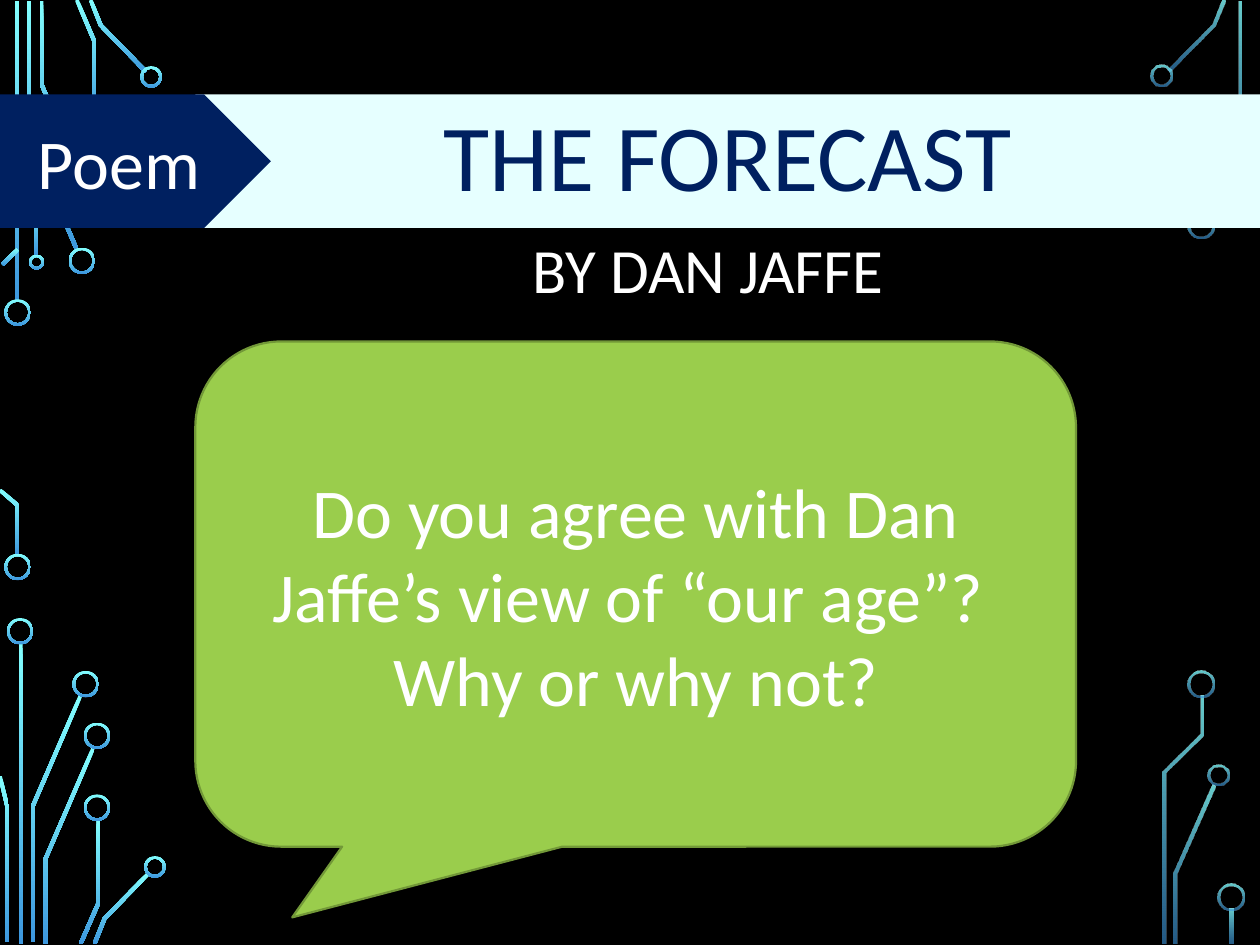
import math

from lxml import etree
from pptx import Presentation
from pptx.dml.color import RGBColor
from pptx.enum import shapes as kinds, text as txt
from pptx.oxml.ns import qn
from pptx.util import Inches, Pt

COLORS = {"black": "000000", "white": "FFFFFF", "navy": "002060", "ice": "E6FFFF",
          "green": "9ACD4C", "dark green": "729838", "cyan": "82FFFF", "blue": "3D97DE"}
FONT = "Calibri"
TRACE_WIDTH = 0.03
RING_WIDTH = 0.02

BYLINE = "BY DAN JAFFE"
POEM_TITLE = "THE FORECAST"
TAG = "Poem"
QUESTION = "Do you agree with Dan Jaffe’s view of “our age”?  Why or why not?"

# Traces are centre lines, bars are (left, top, height), rings are (centre x, centre y, diameter).
CIRCUITS = [
    {"opacity": None,
     "bars": [(0.12, 0.01, 2.39), (0.15, 5.1, 2.39)],
     "traces": [
         [(0.23, 0.01), (0.23, 1.09), (0.61, 1.98)],
         [(0.33, 0.01), (0.33, 0.67), (0.71, 1.56)],
         [(0.61, 0), (0.75, 0.33), (0.75, 1)],
         [(0.72, 0), (0.8, 0.2), (1.16, 0.57)],
         [(0.02, 2.1), (0.14, 1.98)],
         [(0, 3.89), (0.14, 4.01), (0.14, 4.41)],
         [(0.15, 1.52), (0.29, 1.66), (0.29, 2.03)],
         [(0.26, 7.48), (0.26, 6.4), (0.64, 5.52)],
         [(0, 6.16), (0.06, 6.41), (0.06, 7.48)],
         [(0.36, 7.49), (0.36, 6.82), (0.74, 5.94)],
         [(0.64, 7.49), (0.78, 7.17), (0.78, 6.5)],
         [(0.75, 7.49), (0.83, 7.29), (1.18, 6.93)]],
     "rings": [(0.14, 2.48, 0.21), (0.14, 4.5, 0.21), (0.65, 2.07, 0.21),
               (0.75, 1.66, 0.21), (0.75, 1.09, 0.21), (1.2, 0.61, 0.17),
               (0.29, 2.08, 0.12), (0.16, 5.01, 0.21), (0.68, 5.43, 0.21),
               (0.77, 5.84, 0.21), (0.77, 6.41, 0.21), (1.23, 6.88, 0.17)]},
    {"opacity": (80, 60),
     "bars": [(9.76, 7.21, 0.28)],
     "traces": [
         [(9.28, 0.56), (9.63, 0.2), (9.71, 0)],
         [(9.33, 7.49), (9.33, 6.93), (9.63, 6.23)],
         [(9.53, 1.69), (9.53, 1.38), (9.84, 1.07), (9.84, 0.01)],
         [(9.24, 7.49), (9.24, 6.13), (9.54, 5.83), (9.54, 5.52)]],
     "rings": [(9.22, 0.6, 0.17), (9.53, 1.79, 0.21), (9.67, 6.15, 0.17),
               (9.53, 5.43, 0.21), (9.77, 7.12, 0.21)]},
]


def color(name):
    return RGBColor.from_string(COLORS[name])


def glow(shape, opacity):
    """Fill with the cyan-to-blue gradient, running downwards."""
    shape.shadow.inherit = False
    shape.line.fill.background()
    shape.fill.gradient()
    shape.fill.gradient_angle = 270
    for i, (stop, name) in enumerate(zip(shape.fill.gradient_stops, ("cyan", "blue"))):
        stop.color.rgb = color(name)
        stop.position = i
    if opacity:
        for value, rgb in zip(opacity, shape._element.spPr.iter(qn("a:srgbClr"))):
            etree.SubElement(rgb, qn("a:alpha")).set("val", str(value * 1000))


def trace_outline(points):
    """Return the closed outline of a centre line with mitred corners."""
    normals = []
    for (x1, y1), (x2, y2) in zip(points, points[1:]):
        length = math.hypot(x2 - x1, y2 - y1)
        normals.append(((y1 - y2) / length, (x2 - x1) / length))
    one_side, other_side = [], []
    joints = zip(points, normals[:1] + normals, normals + normals[-1:])
    for (x, y), (ax, ay), (bx, by) in joints:
        reach = TRACE_WIDTH / 2 / (1 + ax * bx + ay * by)
        dx, dy = (ax + bx) * reach, (ay + by) * reach
        one_side.append((Inches(x + dx), Inches(y + dy)))
        other_side.append((Inches(x - dx), Inches(y - dy)))
    return one_side + other_side[::-1]


def draw_circuit(slide, circuit):
    group = slide.shapes.add_group_shape().shapes
    parts = []
    for left, top, height in circuit["bars"]:
        parts.append(group.add_shape(kinds.MSO_SHAPE.RECTANGLE, Inches(left), Inches(top),
                                     Inches(TRACE_WIDTH), Inches(height)))
    for points in circuit["traces"]:
        outline = trace_outline(points)
        builder = group.build_freeform(*outline[0])
        builder.add_line_segments(outline[1:], close=True)
        parts.append(builder.convert_to_shape())
    for x, y, size in circuit["rings"]:
        ring = group.add_shape(kinds.MSO_SHAPE.DONUT, Inches(x - size / 2),
                               Inches(y - size / 2), Inches(size), Inches(size))
        ring.adjustments[0] = RING_WIDTH / size
        parts.append(ring)
    for part in parts:
        glow(part, circuit["opacity"])


def write(shape, words, size, ink, align=txt.PP_ALIGN.CENTER, spacing=1.0):
    frame = shape.text_frame
    frame.text = words
    frame.word_wrap = True
    frame.auto_size = txt.MSO_AUTO_SIZE.NONE
    frame.vertical_anchor = txt.MSO_ANCHOR.MIDDLE
    paragraph = frame.paragraphs[0]
    paragraph.alignment = align
    paragraph.line_spacing = spacing
    font = paragraph.runs[0].font
    font.name, font.size, font.color.rgb = FONT, Pt(size), color(ink)


def add_panel(slide, kind, box, fill):
    panel = slide.shapes.add_shape(kind, *map(Inches, box))
    panel.shadow.inherit = False
    panel.fill.solid()
    panel.fill.fore_color.rgb = color(fill)
    panel.line.fill.background()
    return panel


def main():
    deck = Presentation()
    deck.slide_width, deck.slide_height = Inches(10), Inches(7.5)
    slide = deck.slides.add_slide(deck.slide_layouts[5])
    slide.background.fill.solid()
    slide.background.fill.fore_color.rgb = color("black")

    for circuit in CIRCUITS:
        draw_circuit(slide, circuit)

    byline = slide.shapes.title
    byline.left, byline.top, byline.width, byline.height = map(Inches, (4.13, 1.36, 8.12, 1.62))
    write(byline, BYLINE, 36, "white", txt.PP_ALIGN.LEFT, 0.9)
    slide.shapes._spTree.append(byline._element)  # in front of the circuits

    banner = add_panel(slide, kinds.MSO_SHAPE.RECTANGLE, (1.55, 0.75, 8.45, 1.06), "ice")
    write(banner, POEM_TITLE, 54, "navy", spacing=0.9)

    tag = add_panel(slide, kinds.MSO_SHAPE.PENTAGON, (0, 0.75, 2.15, 1.06), "navy")
    write(tag, TAG, 40, "white")

    bubble = add_panel(slide, kinds.MSO_SHAPE.ROUNDED_RECTANGULAR_CALLOUT,
                       (1.55, 2.71, 6.99, 4.01), "green")
    for i, value in enumerate((-0.39, 0.64, 0.17)):
        bubble.adjustments[i] = value
    bubble.line.color.rgb = color("dark green")
    bubble.line.width = Pt(1.25)
    write(bubble, QUESTION, 40, "white")

    deck.save("out.pptx")


if __name__ == "__main__":
    main()
